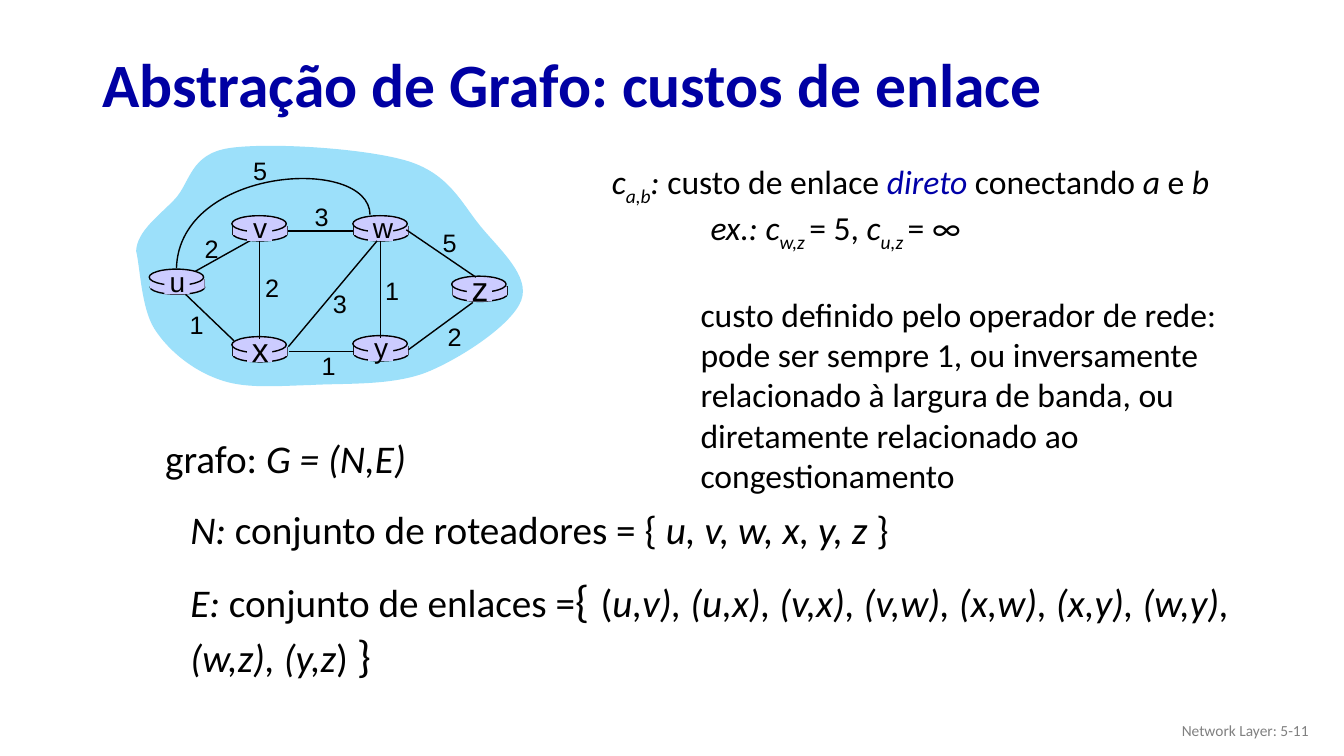
import pptx
import pptx.util
import pptx.dml.color
import pptx.enum.shapes
import pptx.enum.text
import pptx.oxml.ns
import lxml.etree

Inch = pptx.util.Inches
Pt = pptx.util.Pt
Kind = pptx.enum.shapes.MSO_SHAPE
Align = pptx.enum.text.PP_ALIGN
Anchor = pptx.enum.text.MSO_ANCHOR
qn = pptx.oxml.ns.qn

THEME = {
    "body": "Calibri", "label": "Arial",
    "title": "0000A3", "accent": "0000A8", "ink": "000000", "foot": "808080",
    "cloud": "9CE0FA", "router": "CCCCFF",
    "head": 44, "set": 28, "brace": 32, "gap": 36, "cost": 24,
    "num": 18, "small": 11, "line": 1,
}

# Content: a run is (text, options); i italic, sub subscript
TITLE = [("Abstração de Grafo: custos de enlace",
          {"size": "head", "color": "title", "b": True})]
FOOT = [("Network Layer: 5-11", {"size": "small", "color": "foot"})]
I, SUB = {"i": True}, {"i": True, "sub": True}
COSTS = [
    [("c", I), ("a,b", SUB), (": ", I), ("custo de enlace ", {}),
     ("direto", {"i": True, "color": "accent"}), (" conectando ", {}),
     ("a", I), (" e ", {}), ("b", I)],
    [("ex.: c", I), ("w,z ", SUB), ("= 5, ", {}), ("c", I), ("u,z ", SUB),
     ("= ∞", {})],
    [("custo definido pelo operador de rede: pode ser sempre 1, ou "
      "inversamente relacionado à largura de banda, ou diretamente "
      "relacionado ao congestionamento", {})],
]
INDENT = (0, 0.98, 0.88)
BEFORE = (0, 0, 29)
GRAPH = [("grafo: ", {}), ("G = (N,E)", I)]
NODES = [("N: ", I), ("conjunto de roteadores = { ", {}),
         ("u, v, w, x, y, z ", I), ("}", {})]
EDGES = [("E: ", I), ("conjunto de enlaces =", {}), ("{", {"size": "brace"}),
         (" ", {"size": "gap"}), ("(", {}),
         ("u,v), (u,x), (v,x), (v,w), (x,w), (x,y), (w,y), (w,z), (y,z", I),
         (") ", {}), ("}", {"size": "brace"})]

# Routers: name -> left, top, letter size
ROUTERS = {"u": (1.48, 2.67, 20), "x": (2.3, 3.34, 24), "v": (2.3, 2.14, 20),
           "w": (3.5, 2.14, 20), "y": (3.5, 3.33, 20), "z": (4.48, 2.74, 24)}
BACK = (1.94, 2.69, 2.53, 2.36)
LINKS = [(2.86, 3.44, 3.74, 2.39), (4.05, 3.47, 4.69, 3), (3.51, 3.49, 2.87, 3.49),
         (2.32, 3.38, 1.84, 2.92), (3.5, 2.29, 2.86, 2.29), (4.72, 2.75, 4.03, 2.28)]
JOINED = [("v", "x"), ("w", "y")]
# Link costs: text, centre x, centre y
LABELS = [("2", 2.1, 2.47), ("2", 2.7, 2.85), ("1", 1.95, 3.22), ("3", 3.37, 3.01),
          ("1", 3.26, 3.63), ("1", 3.89, 2.88), ("2", 4.51, 3.34), ("5", 4.46, 2.41),
          ("3", 3.19, 2.15), ("5", 2.58, 1.69)]
# Curves: start point, then two controls and an end per segment
CLOUD = [
    (1.35, 2.49),
    (1.36, 2.29), (1.58, 2.14), (1.74, 1.97), (1.89, 1.8), (1.89, 1.53), (2.27, 1.47),
    (2.66, 1.41), (3.63, 1.47), (4.05, 1.6), (4.46, 1.73), (4.58, 2.02), (4.77, 2.25),
    (4.96, 2.48), (5.26, 2.74), (5.17, 2.98), (5.08, 3.22), (4.58, 3.55), (4.24, 3.69),
    (3.89, 3.83), (3.42, 3.8), (3.08, 3.82), (2.73, 3.83), (2.42, 3.86), (2.16, 3.76),
    (1.91, 3.67), (1.67, 3.48), (1.53, 3.26), (1.4, 3.05), (1.39, 2.65), (1.35, 2.49)]
ARC = [(3.67, 2.13), (3.66, 1.54), (1.78, 1.65), (1.75, 2.66)]

deck = pptx.Presentation()
deck.slide_width, deck.slide_height = Inch(13.33), Inch(7.5)
shapes = deck.slides.add_slide(deck.slide_layouts[6]).shapes


def rgb(name):
    return pptx.dml.color.RGBColor.from_string(THEME[name])


def text(box, paras, size, font="body", align=Align.LEFT, anchor=Anchor.TOP,
         wrap=True, lead=None):
    frame = shapes.add_textbox(*map(Inch, box)).text_frame
    frame.word_wrap, frame.vertical_anchor = wrap, anchor
    for n, runs in enumerate(paras):
        para = frame.add_paragraph() if n else frame.paragraphs[0]
        para.alignment = align
        if lead:
            para.line_spacing = lead
        for words, opts in runs:
            run = para.add_run()
            run.text = words
            face = run.font
            face.name = THEME[font]
            face.size = Pt(THEME[opts["size"]] if "size" in opts else size)
            face.color.rgb = rgb(opts.get("color", "ink"))
            face.bold, face.italic = opts.get("b", False), opts.get("i", False)
            if opts.get("sub"):
                run._r.get_or_add_rPr().set("baseline", "-25000")
    return frame


def paint(shape, fill=None, line=True):
    shape.shadow.inherit = False
    if fill:
        shape.fill.solid()
        shape.fill.fore_color.rgb = rgb(fill)
    else:
        shape.fill.background()
    if line:
        shape.line.color.rgb, shape.line.width = rgb("ink"), Pt(THEME["line"])
    else:
        shape.line.fill.background()
    return shape


def block(kind, box, line=True):
    return paint(shapes.add_shape(kind, *map(Inch, box)), "router", line)


def link(*ends):
    wire = shapes.add_connector(pptx.enum.shapes.MSO_CONNECTOR.STRAIGHT,
                                *map(Inch, ends))
    wire.line.color.rgb, wire.line.width = rgb("ink"), Pt(THEME["line"])
    lxml.etree.SubElement(wire._element.spPr, qn("a:effectLst"))
    return wire


def curve(dots, close, fill, line):
    """Draw an outline, then turn each three segments into one Bézier."""
    dots = [(Inch(x), Inch(y)) for x, y in dots]
    pen = shapes.build_freeform(*dots[0])
    pen.add_line_segments(dots[1:], close=close)
    shape = paint(pen.convert_to_shape(), fill, line)
    steps = list(shape._element.iter(qn("a:lnTo")))
    for n in range(0, len(steps), 3):
        bend = lxml.etree.Element(qn("a:cubicBezTo"))
        steps[n].addprevious(bend)
        for step in steps[n:n + 3]:
            bend.append(step[0])
            step.getparent().remove(step)


def router(left, top):
    """Draw a disc-shaped router and return the plate for its letter."""
    block(Kind.OVAL, (left + 0.01, top + 0.11, 0.54, 0.14))
    for side in (left + 0.01, left + 0.55):
        link(side, top + 0.1, side, top + 0.19)
    block(Kind.RECTANGLE, (left + 0.01, top + 0.1, 0.54, 0.09), False)
    block(Kind.OVAL, (left, top, 0.54, 0.16))
    return block(Kind.RECTANGLE, (left + 0.15, top + 0.02, 0.25, 0.23), False)


def label(word, x, y, size):
    high = size * 0.0167 + 0.1
    text((x - 0.18, y - high / 2, 0.36, high), [[(word, {})]], size,
         "label", Align.CENTER, wrap=False)


# Title and footer
text((0.92, 0.38, 10.6, 0.98), [TITLE], THEME["head"], anchor=Anchor.MIDDLE, lead=0.9)
text((10.08, 7.05, 3, 0.4), [FOOT], THEME["small"], align=Align.RIGHT,
     anchor=Anchor.MIDDLE)

# Network graph
curve(CLOUD, True, "cloud", False)
link(*BACK)
plates = {name: router(x, y) for name, (x, y, _) in ROUTERS.items()}
for ends in LINKS:
    link(*ends)
for high, low in JOINED:
    wire = link(0, 0, 1, 1)
    wire.begin_connect(plates[high], 2)
    wire.end_connect(plates[low], 0)
curve(ARC, False, None, True)
for name, (x, y, size) in ROUTERS.items():
    label(name, x + 0.28, y + 0.12, size)
for word, x, y in LABELS:
    label(word, x, y, THEME["num"])

# Cost notes
notes = text((5.97, 1.55, 6.44, 3.33), COSTS, THEME["cost"])
for para, indent, before in zip(notes.paragraphs, INDENT, BEFORE):
    para.space_before = Pt(before)
    props = para._p.get_or_add_pPr()
    props.set("marL", str(Inch(indent)))
    props.set("indent", "0")

# Graph definition
text((1.54, 4.26, 2.8, 0.57), [GRAPH], THEME["set"])
text((1.79, 4.96, 7.4, 0.57), [NODES], THEME["set"])
text((1.79, 5.58, 10.61, 1.25), [EDGES], THEME["set"])

deck.save("out.pptx")
